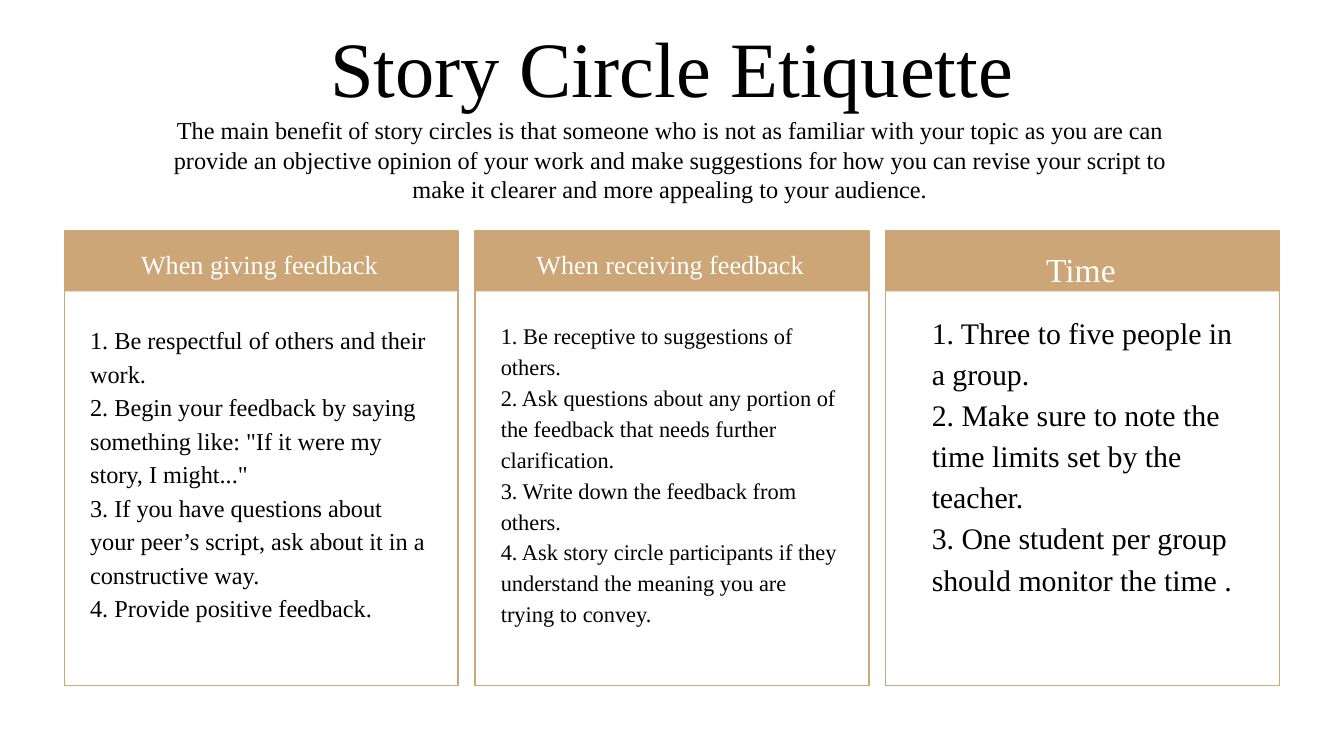
from pptx import Presentation
from pptx.dml.color import RGBColor
from pptx.enum.shapes import MSO_SHAPE
from pptx.enum.text import MSO_ANCHOR, MSO_AUTO_SIZE, PP_ALIGN
from pptx.oxml.ns import qn
from pptx.util import Pt
from lxml import etree

RECT = MSO_SHAPE.RECTANGLE
TOP, BOTTOM = MSO_ANCHOR.TOP, MSO_ANCHOR.BOTTOM
LEFT, CENTER = PP_ALIGN.LEFT, PP_ALIGN.CENTER
NO_FIT = MSO_AUTO_SIZE.NONE
COMPARISON_LAYOUT = 3 + 1

FONT = "Times New Roman"
COLORS = {"tan": "CCA677", "ink": "000000", "white": "FFFFFF"}

TITLE = "Story Circle Etiquette"
INTRO = (
    "The main benefit of story circles is that someone who is not as familiar "
    "with your topic as you are can provide an objective opinion of your work "
    "and make suggestions for how you can revise your script to make it clearer "
    "and more appealing to your audience."
)
# Heading, heading size, rules, rule size, rules top within card, rules indent
COLUMNS = [
    ("When giving feedback", 14, [
        "1. Be respectful of others and their work.",
        "2. Begin your feedback by saying something like: \"If it were my story, I might...\"",
        "3. If you have questions about your peer’s script, ask about it in a constructive way.",
        "4. Provide positive feedback.",
    ], 13, 41, 0),
    ("When receiving feedback", 14, [
        "1. Be receptive to suggestions of others.",
        "2. Ask questions about any portion of the feedback that needs further clarification.",
        "3. Write down the feedback from others.",
        "4. Ask story circle participants if they understand the meaning you are trying to convey.",
    ], 12, 39.5, 0),
    ("Time", 18, [
        "1. Three to five people in a group.",
        "2. Make sure to note the time limits set by the teacher.",
        "3. One student per group should monitor the time .",
    ], 16, 34.5, 11),
]

CARD_LEFT, CARD_TOP, CARD_WIDTH, CARD_HEIGHT = 34.5, 123.8, 211, 243.4
CARD_PITCH = 220
HEADER_HEIGHT = 32.4
TEXT_INSET, TEXT_WIDTH, RULES_HEIGHT = 6.6, 196, 201


def color(name):
    return RGBColor.from_string(COLORS[name])


def write(holder, box, lines, size, ink, align=LEFT, anchor=TOP,
          spacing=1.0, indent=0, inset=(7.2, 7.2)):
    """Move a text holder to box and fill it with one paragraph per line."""
    holder.left, holder.top, holder.width, holder.height = map(Pt, box)
    frame = holder.text_frame
    frame.word_wrap = True
    frame.auto_size = NO_FIT
    frame.vertical_anchor = anchor
    frame.margin_left = frame.margin_right = Pt(inset[0])
    frame.margin_top = frame.margin_bottom = Pt(inset[1])
    for number, line in enumerate(lines):
        paragraph = frame.add_paragraph() if number else frame.paragraphs[0]
        paragraph.alignment = align
        paragraph.line_spacing = spacing
        paragraph.space_before = paragraph.space_after = Pt(0)
        properties = paragraph._p.get_or_add_pPr()
        properties.set("marL", str(Pt(indent)))
        properties.set("indent", "0")
        etree.SubElement(properties, qn("a:buNone"))
        run = paragraph.add_run()
        run.text = line
        run.font.name = FONT
        run.font.size = Pt(size)
        run.font.bold = False
        run.font.color.rgb = color(ink)


def add_panel(slide, box, fill=None, line=None):
    """Add a rectangle behind the title and body text."""
    panel = slide.shapes.add_shape(RECT, *map(Pt, box))
    panel.shadow.inherit = False
    if fill:
        panel.fill.solid()
        panel.fill.fore_color.rgb = color(fill)
    else:
        panel.fill.background()
    if line:
        panel.line.color.rgb = color(line)
        panel.line.width = Pt(0.75)
    else:
        panel.line.fill.background()
    slide.shapes.title.element.addprevious(panel.element)


def add_heading_block(slide, box):
    left, top, width, height = box
    write(slide.shapes.title, (left, top, width, 65.5), [TITLE], 42, "ink",
          CENTER, BOTTOM)
    intro = slide.shapes.add_textbox(0, 0, 0, 0)
    write(intro, (left + 46.8, top + 56.2, 574.6, height - 56.2), [INTRO], 13,
          "ink", CENTER, inset=(7.2, 3.6))


def add_card(slide, box, column, holders):
    left, top, width, height = box
    heading, heading_size, rules, rule_size, rules_top, indent = column
    heading_holder, rules_holder = holders
    add_panel(slide, box, line="tan")
    add_panel(slide, (left, top, width, HEADER_HEIGHT), fill="tan")
    text_left = left + TEXT_INSET
    write(heading_holder, (text_left, top - 0.7, TEXT_WIDTH, HEADER_HEIGHT),
          [heading], heading_size, "white", CENTER, spacing=1.15)
    write(rules_holder, (text_left, top + rules_top, TEXT_WIDTH, RULES_HEIGHT),
          rules, rule_size, "ink", spacing=1.15, indent=indent)


def main():
    presentation = Presentation()
    presentation.slide_width, presentation.slide_height = Pt(720), Pt(405)
    layout = presentation.slide_layouts[COMPARISON_LAYOUT]
    slide = presentation.slides.add_slide(layout)

    # Title and introduction
    add_heading_block(slide, (24.5, 2.2, 671, 111))

    # Three cards: the layout holds text for two, text boxes serve the third
    bodies = [p for p in slide.placeholders if 1 <= p.placeholder_format.idx <= 4]
    bodies += [slide.shapes.add_textbox(0, 0, 0, 0) for _ in range(2)]
    for number, column in enumerate(COLUMNS):
        box = (CARD_LEFT + number * CARD_PITCH, CARD_TOP, CARD_WIDTH, CARD_HEIGHT)
        add_card(slide, box, column, bodies[2 * number:2 * number + 2])

    presentation.save("out.pptx")


if __name__ == "__main__":
    main()
